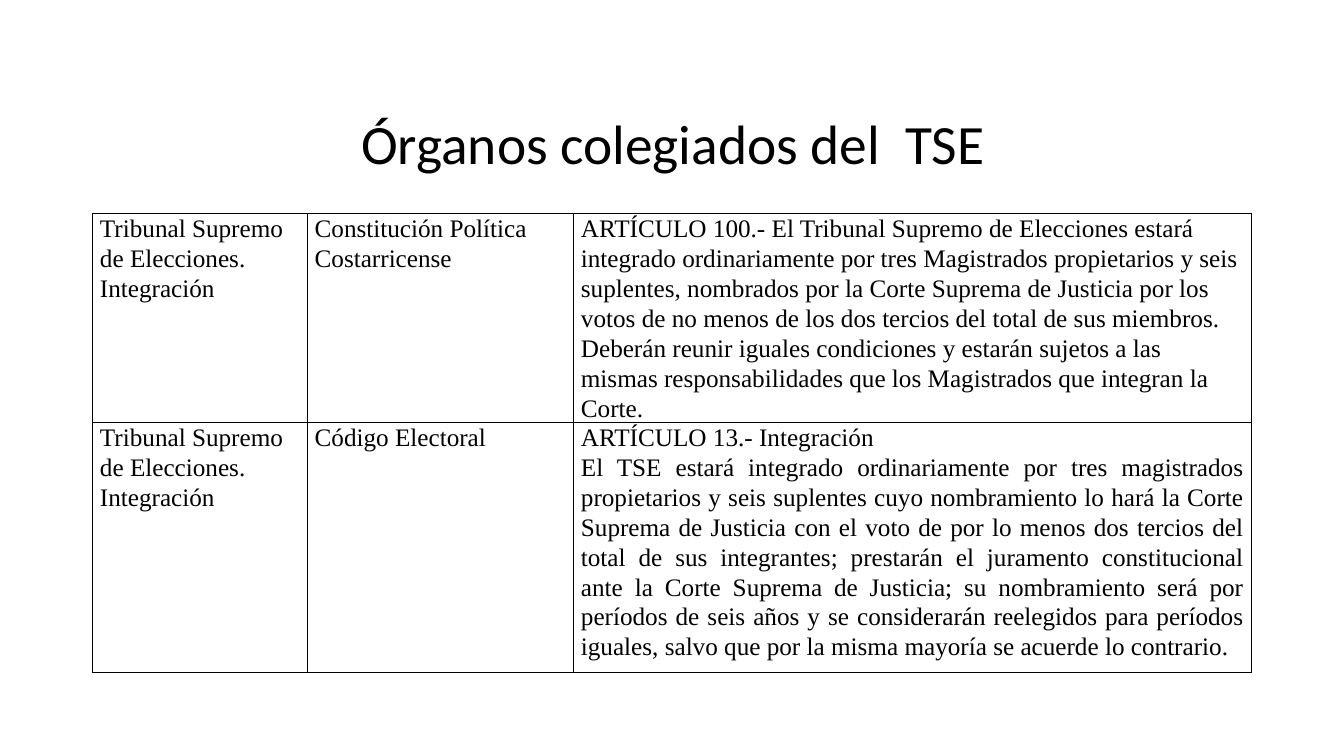
from lxml import etree
from pptx import Presentation
from pptx.dml.color import RGBColor
from pptx.enum.text import MSO_ANCHOR, MSO_AUTO_SIZE, PP_ALIGN
from pptx.oxml.ns import qn
from pptx.util import Cm, Pt

CENTER, LEFT, JUSTIFY = PP_ALIGN.CENTER, PP_ALIGN.LEFT, PP_ALIGN.JUSTIFY
MIDDLE, TOP = MSO_ANCHOR.MIDDLE, MSO_ANCHOR.TOP
TITLE_ONLY = 5
BLACK = "000000"

TITLE = "Órganos colegiados del  TSE"
BODY = "Tribunal Supremo de Elecciones. Integración"
COLUMN_WIDTHS = [5.41, 6.71, 17.09]
ROW_HEIGHTS = [3.78, 6.3]
# Each cell: alignment, space after the text, paragraphs
ROWS = [
    [
        (LEFT, 0, [BODY]),
        (LEFT, 0, ["Constitución Política Costarricense"]),
        (LEFT, 8, [
            "ARTÍCULO 100.- El Tribunal Supremo de Elecciones estará integrado "
            "ordinariamente por tres Magistrados propietarios y seis suplentes, "
            "nombrados por la Corte Suprema de Justicia por los votos de no menos "
            "de los dos tercios del total de sus miembros. Deberán reunir iguales "
            "condiciones y estarán sujetos a las mismas responsabilidades que los "
            "Magistrados que integran la Corte."]),
    ],
    [
        (LEFT, 0, [BODY]),
        (LEFT, 0, ["Código Electoral"]),
        (JUSTIFY, 0, [
            "ARTÍCULO 13.- Integración",
            "El TSE estará integrado ordinariamente por tres magistrados "
            "propietarios y seis suplentes cuyo nombramiento lo hará la Corte "
            "Suprema de Justicia con el voto de por lo menos dos tercios del total "
            "de sus integrantes; prestarán el juramento constitucional ante la "
            "Corte Suprema de Justicia; su nombramiento será por períodos de seis "
            "años y se considerarán reelegidos para períodos iguales, salvo que "
            "por la misma mayoría se acuerde lo contrario."]),
    ],
]


def color(value):
    return RGBColor.from_string(value)


def add_run(paragraph, text, font_name, size):
    run = paragraph.add_run()
    run.text = text
    run.font.name = font_name
    run.font.size = Pt(size)
    run.font.color.rgb = color(BLACK)


def add_borders(cell, value, width):
    properties = cell._tc.get_or_add_tcPr()
    for position, side in enumerate(("a:lnL", "a:lnR", "a:lnT", "a:lnB")):
        line = etree.Element(qn(side), w=str(Pt(width)))
        fill = etree.SubElement(line, qn("a:solidFill"))
        etree.SubElement(fill, qn("a:srgbClr"), val=value)
        properties.insert(position, line)


def fill_cell(cell, alignment, space_after, texts):
    cell.margin_left = cell.margin_right = Cm(0.19)
    cell.margin_top = cell.margin_bottom = 0
    cell.vertical_anchor = TOP
    cell.fill.background()
    add_borders(cell, BLACK, 1)
    frame = cell.text_frame
    for index, text in enumerate(texts):
        paragraph = frame.add_paragraph() if index else frame.paragraphs[0]
        paragraph.alignment = alignment
        paragraph.line_spacing = 1.07
        paragraph.space_after = Pt(space_after)
        add_run(paragraph, text, "Times New Roman", 18)


def place_title(slide, left, top, width, height):
    title = slide.shapes.title
    title.left, title.top, title.width, title.height = left, top, width, height
    frame = title.text_frame
    frame.auto_size = MSO_AUTO_SIZE.NONE
    frame.word_wrap = True
    frame.vertical_anchor = MIDDLE
    paragraph = frame.paragraphs[0]
    paragraph.alignment = CENTER
    paragraph.line_spacing = 0.9
    add_run(paragraph, TITLE, "Calibri", 39.6)


def add_articles_table(slide, left, top, width, height):
    table = slide.shapes.add_table(
        len(ROWS), len(COLUMN_WIDTHS), left, top, width, height).table
    table.first_row = table.horz_banding = False
    for column, column_width in zip(table.columns, COLUMN_WIDTHS):
        column.width = Cm(column_width)
    for row, row_height, contents in zip(table.rows, ROW_HEIGHTS, ROWS):
        row.height = Cm(row_height)
        for cell, content in zip(row.cells, contents):
            fill_cell(cell, *content)


def main():
    presentation = Presentation()
    presentation.slide_width, presentation.slide_height = Cm(33.87), Cm(19.05)
    slide = presentation.slides.add_slide(presentation.slide_layouts[TITLE_ONLY])
    left = Cm(2.33)
    # Heading
    place_title(slide, left, Cm(2.84), Cm(29.26), Cm(1.7))
    # Legal basis of the court
    add_articles_table(slide, left, Cm(5.38),
                       Cm(sum(COLUMN_WIDTHS)), Cm(sum(ROW_HEIGHTS)))
    presentation.save("out.pptx")


if __name__ == "__main__":
    main()
